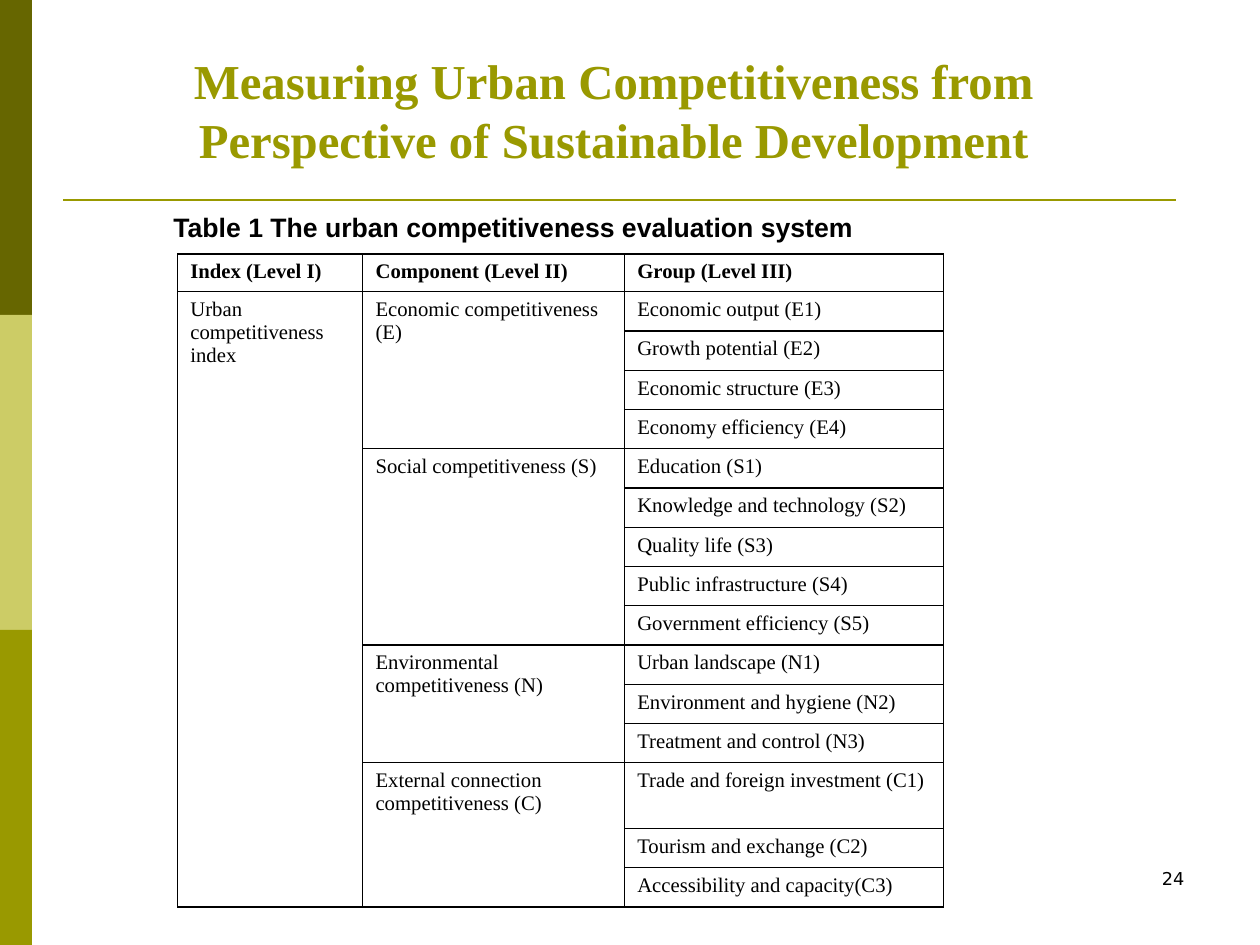
from lxml import etree
from pptx import Presentation
from pptx import util as u
from pptx.dml.color import RGBColor
from pptx.enum import shapes, text
from pptx.oxml import ns

Pt = u.Pt
COLORS = {"dark": "666600", "light": "CCCC66", "olive": "999900", "black": "000000"}
SERIF = "Times New Roman"
PAD_X, PAD_Y = Pt(8.64), Pt(4.32)


def write(holder, words, font, size, color="black", bold=False):
    """Fill a text box or table cell with one padded, formatted paragraph."""
    holder.margin_left = holder.margin_right = PAD_X
    holder.margin_top = holder.margin_bottom = PAD_Y
    frame = getattr(holder, "text_frame", holder)
    frame.word_wrap = True
    para = frame.paragraphs[0]
    para.text = words
    span = para.runs[0]
    span.font.name = font
    span.font.size = Pt(size)
    span.font.bold = bold
    span.font.color.rgb = RGBColor.from_string(COLORS[color])
    return para


def add_borders(cell, width):
    props = cell._tc.get_or_add_tcPr()
    for side in ("lnL", "lnR", "lnT", "lnB"):
        edge = etree.SubElement(props, ns.qn(f"a:{side}"), w=str(Pt(width)))
        fill = etree.SubElement(edge, ns.qn("a:solidFill"))
        etree.SubElement(fill, ns.qn("a:srgbClr"), val=COLORS["black"])


deck = Presentation()
deck.slide_width, deck.slide_height = Pt(852.48), Pt(639.36)
page = deck.slides.add_slide(deck.slide_layouts[6])

# Side band and title rule
band_height = 213.12
for i, shade in enumerate(("dark", "light", "olive")):
    band = page.shapes.add_shape(shapes.MSO_SHAPE.RECTANGLE, 0, Pt(i * band_height),
                                 Pt(21.6), Pt(band_height))
    band.shadow.inherit = False
    band.fill.solid()
    band.fill.fore_color.rgb = RGBColor.from_string(COLORS[shade])
    band.line.fill.background()

rule = page.shapes.add_connector(shapes.MSO_CONNECTOR.STRAIGHT,
                                 Pt(42.7), Pt(135.2), Pt(795.6), Pt(135.2))
rule.line.color.rgb = RGBColor.from_string(COLORS["olive"])
rule.line.width = Pt(1.5)
etree.SubElement(rule._element.spPr, ns.qn("a:effectLst"))

# Title, caption and page number
title = page.shapes.add_textbox(Pt(69.1), Pt(25.2), Pt(692.6), Pt(92.9)).text_frame
title.vertical_anchor = text.MSO_ANCHOR.BOTTOM
para = write(title, "Measuring Urban Competitiveness from Perspective of Sustainable Development",
             SERIF, 33, "olive", True)
para.alignment = text.PP_ALIGN.CENTER

caption = page.shapes.add_textbox(Pt(108.7), Pt(138.2), Pt(810), Pt(35.3)).text_frame
write(caption, "Table 1 The urban competitiveness evaluation system", "Arial", 18, bold=True)

number = page.shapes.add_textbox(Pt(611.3), Pt(582.5), Pt(198.7), Pt(42.5)).text_frame
write(number, "24", "DejaVu Sans", 12).alignment = text.PP_ALIGN.RIGHT

# Evaluation system table
HEADERS = ["Index (Level I)", "Component (Level II)", "Group (Level III)"]
COMPONENTS = {
    "Economic competitiveness (E)": [
        "Economic output (E1)", "Growth potential (E2)",
        "Economic structure (E3)", "Economy efficiency (E4)"],
    "Social competitiveness (S)": [
        "Education (S1)", "Knowledge and technology (S2)", "Quality life (S3)",
        "Public infrastructure (S4)", "Government efficiency (S5)"],
    "Environmental competitiveness (N)": [
        "Urban landscape (N1)", "Environment and hygiene (N2)", "Treatment and control (N3)"],
    "External connection competitiveness (C)": [
        "Trade and foreign investment (C1)", "Tourism and exchange (C2)",
        "Accessibility and capacity(C3)"],
}
row_count = 1 + sum(len(groups) for groups in COMPONENTS.values())
table = page.shapes.add_table(row_count, 3, Pt(120.2), Pt(171.9), Pt(518.4), Pt(441)).table
table.first_row = table.horz_banding = False
for column, width in zip(table.columns, (125.3, 177.1, 216)):
    column.width = Pt(width)
for row in table.rows:
    row.height = Pt(26.58)
table.rows[0].height = Pt(24.4)
table.rows[13].height = Pt(44.4)

for cell in table.iter_cells():
    add_borders(cell, 1)
    cell.fill.background()
    cell.margin_top = cell.margin_bottom = 0

for col, header in enumerate(HEADERS):
    write(table.cell(0, col), header, SERIF, 14, bold=True)

table.cell(1, 0).merge(table.cell(row_count - 1, 0))
write(table.cell(1, 0), "Urban competitiveness index", SERIF, 14)
first = 1
for component, groups in COMPONENTS.items():
    table.cell(first, 1).merge(table.cell(first + len(groups) - 1, 1))
    write(table.cell(first, 1), component, SERIF, 14)
    for i, group in enumerate(groups):
        write(table.cell(first + i, 2), group, SERIF, 14)
    first += len(groups)

deck.save("out.pptx")
